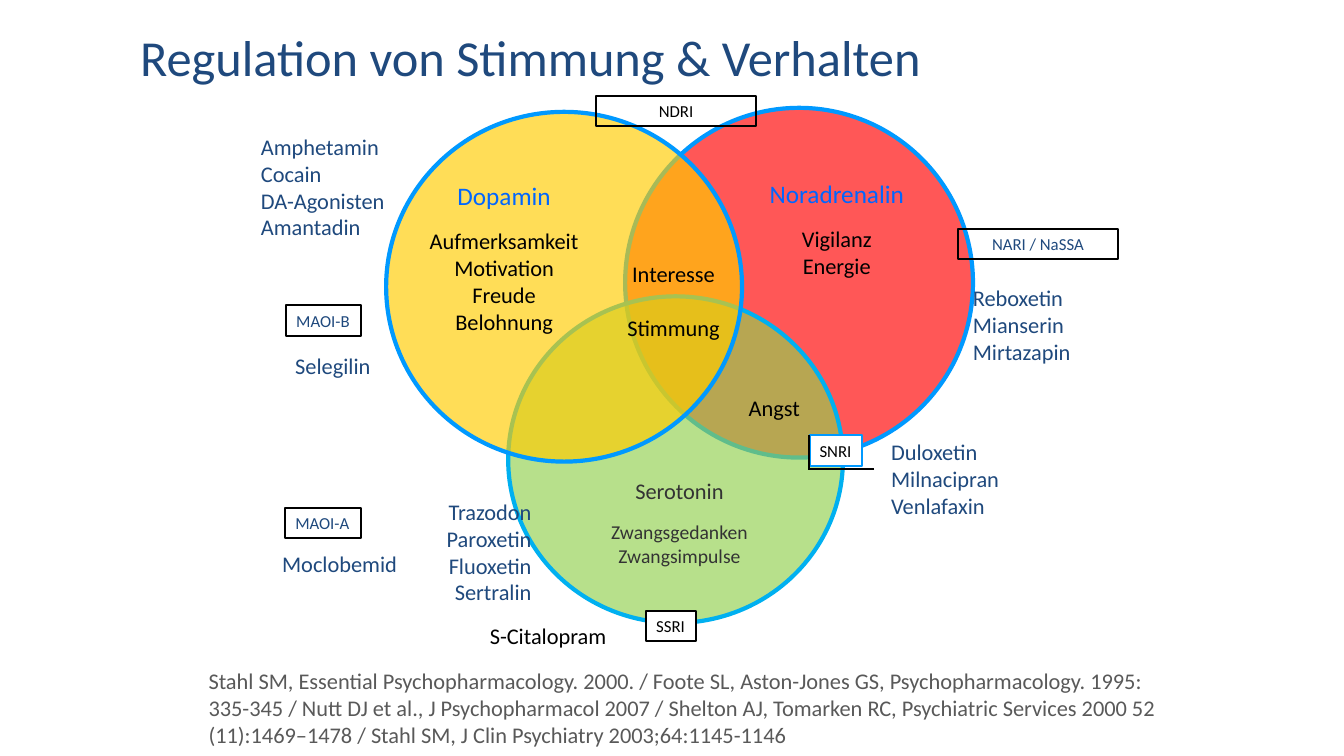
from typing import NamedTuple

from lxml import etree
from pptx import Presentation
from pptx.dml.color import RGBColor
from pptx.enum.shapes import MSO_CONNECTOR, MSO_SHAPE
from pptx.enum.text import MSO_ANCHOR, MSO_AUTO_SIZE, PP_ALIGN
from pptx.oxml.ns import qn
from pptx.util import Inches, Pt

LEFT, CENTER, RIGHT = PP_ALIGN.LEFT, PP_ALIGN.CENTER, PP_ALIGN.RIGHT
OVAL, RECT = MSO_SHAPE.OVAL, MSO_SHAPE.RECTANGLE
FONT = "Calibri"
NAVY, BLUE, BLACK, WHITE = "1F497D", "0066FF", "000000", "FFFFFF"
DARK, GREY = "333333", "595959"
RING = "0099FF"


class Box(NamedTuple):
    left: float
    top: float
    width: float
    height: float


class Circle(NamedTuple):
    box: Box
    fill: str
    line: str


class Line(NamedTuple):
    text: str
    size: int = 16
    color: str = BLACK
    before: float = 0


class Topic(NamedTuple):
    box: Box
    lines: list[Line]


class Drugs(NamedTuple):
    box: Box
    names: list[str]
    align: PP_ALIGN = LEFT
    color: str = NAVY


class Tag(NamedTuple):
    box: Box
    text: str
    color: str = BLACK
    fill: str | None = None
    line: str = BLACK
    centered: bool = False


CIRCLES = [
    Circle(Box(6.2, 1.07, 3.45, 3.47), "FF0000", RING),
    Circle(Box(5.04, 2.94, 3.32, 3.24), "92D050", "00B0F0"),
    Circle(Box(3.83, 1.11, 3.53, 3.47), "FFCC00", RING),
]
TOPICS = [
    Topic(Box(4.08, 1.74, 1.84, 1.64), [
        Line("Dopamin", 18, BLUE), Line("Aufmerksamkeit", before=12),
        Line("Motivation"), Line("Freude"), Line("Belohnung")]),
    Topic(Box(7.42, 1.72, 1.76, 1.1), [
        Line("Noradrenalin", 18, BLUE), Line("Vigilanz", before=12), Line("Energie")]),
    Topic(Box(7.23, 3.86, 0.9, 0.37), [Line("Angst")]),
    Topic(Box(5.86, 4.68, 1.76, 1), [
        Line("Serotonin", 16, DARK), Line("Zwangsgedanken", 14, DARK, 12),
        Line("Zwangsimpulse", 14, DARK)]),
    Topic(Box(6.04, 2.53, 1.28, 0.9), [Line("Interesse"), Line("Stimmung", before=19.5)]),
]
TAGS = [
    Tag(Box(6.41, 6.06, 0.49, 0.3), "SSRI", fill=WHITE),
    Tag(Box(8.03, 4.32, 0.52, 0.3), "SNRI", fill=WHITE, line=RING),
    Tag(Box(5.91, 0.95, 1.59, 0.3), "NDRI", centered=True),
    Tag(Box(2.83, 5.04, 0.75, 0.3), "MAOI-A", NAVY),
    Tag(Box(2.84, 3.03, 0.74, 0.3), "MAOI-B", NAVY),
    Tag(Box(9.5, 2.27, 1.59, 0.3), "NARI / NaSSA", NAVY, centered=True),
]
SNRI_EDGES = [(8.67, 4.65, 8.01, 4.65), (8.02, 4.32, 8.02, 4.66)]
DRUGS = [
    Drugs(Box(8.74, 4.3, 1.28, 0.91), ["Duloxetin", "Milnacipran", "Venlafaxin"]),
    Drugs(Box(4.32, 4.89, 1.05, 1.18),
          ["Trazodon", "Paroxetin", "Fluoxetin", "Sertralin"], RIGHT),
    Drugs(Box(4.76, 6.12, 1.65, 0.37), ["S-Citalopram"], color=BLACK),
    Drugs(Box(2.49, 1.27, 1.44, 1.18),
          ["Amphetamin", "Cocain", "DA-Agonisten", "Amantadin"]),
    Drugs(Box(9.55, 2.77, 1.18, 0.91), ["Reboxetin", "Mianserin", "Mirtazapin"]),
    Drugs(Box(2.83, 3.44, 0.96, 0.37), ["Selegilin"]),
    Drugs(Box(2.7, 5.41, 1.35, 0.37), ["Moclobemid"]),
]
SOURCES = (
    "Stahl SM, Essential Psychopharmacology. 2000. / Foote SL, Aston-Jones GS, "
    "Psychopharmacology. 1995: 335-345 / Nutt DJ et al., J Psychopharmacol 2007 / "
    "Shelton AJ, Tomarken RC, Psychiatric Services 2000 52 (11):1469–1478 / "
    "Stahl SM, J Clin Psychiatry 2003;64:1145-1146"
)


def rgb(color: str) -> RGBColor:
    return RGBColor.from_string(color)


def emu(box: Box) -> list[int]:
    return [Inches(v) for v in box]


def write(tf, lines: list[Line], align: PP_ALIGN, wrap: bool) -> None:
    tf.word_wrap = wrap
    for i, line in enumerate(lines):
        p = tf.paragraphs[0] if i == 0 else tf.add_paragraph()
        p.text = line.text
        p.alignment = align
        if line.before:
            p.space_before = Pt(line.before)
        p.font.name = FONT
        p.font.size = Pt(line.size)
        p.font.color.rgb = rgb(line.color)


def add_text(slide, box: Box, lines: list[Line], align: PP_ALIGN, wrap: bool) -> None:
    tf = slide.shapes.add_textbox(*emu(box)).text_frame
    write(tf, lines, align, wrap)
    tf.auto_size = MSO_AUTO_SIZE.SHAPE_TO_FIT_TEXT


def add_outlined(slide, kind: MSO_SHAPE, box: Box, fill: str | None, line: str, width: float):
    sp = slide.shapes.add_shape(kind, *emu(box))
    sp.shadow.inherit = False
    if fill:
        sp.fill.solid()
        sp.fill.fore_color.rgb = rgb(fill)
    else:
        sp.fill.background()
    sp.line.color.rgb = rgb(line)
    sp.line.width = Pt(width)
    return sp


def add_circle(slide, circle: Circle) -> None:
    sp = add_outlined(slide, OVAL, circle.box, circle.fill, circle.line, 3)
    color = sp.fill._xPr.find(qn("a:solidFill"))[0]
    etree.SubElement(color, qn("a:alpha")).set("val", "66000")


def add_tag(slide, tag: Tag) -> None:
    sp = add_outlined(slide, RECT, tag.box, tag.fill, tag.line, 1.5)
    align = CENTER if tag.centered else LEFT
    write(sp.text_frame, [Line(tag.text, 12, tag.color)], align, tag.centered)
    sp.text_frame.vertical_anchor = MSO_ANCHOR.TOP
    sp.text_frame.auto_size = MSO_AUTO_SIZE.SHAPE_TO_FIT_TEXT


def add_edge(slide, ends: tuple[float, float, float, float]) -> None:
    cxn = slide.shapes.add_connector(MSO_CONNECTOR.STRAIGHT, *[Inches(v) for v in ends])
    cxn.line.color.rgb = rgb(BLACK)
    cxn.line.width = Pt(1.5)
    etree.SubElement(cxn._element.spPr, qn("a:effectLst"))


def main() -> None:
    prs = Presentation()
    prs.slide_width, prs.slide_height = Inches(13.33), Inches(7.5)
    slide = prs.slides.add_slide(prs.slide_layouts[5])

    # Title
    title = slide.shapes.title
    title.left, title.top, title.width, title.height = emu(Box(1.29, 0.24, 8.62, 0.63))
    title.fill.solid()
    title.fill.fore_color.rgb = rgb(WHITE)
    write(title.text_frame, [Line("Regulation von Stimmung & Verhalten", 36, NAVY)], LEFT, True)
    title.text_frame.vertical_anchor = MSO_ANCHOR.MIDDLE

    # Overlapping circles and their topics
    for circle in CIRCLES:
        add_circle(slide, circle)
    for topic in TOPICS:
        add_text(slide, topic.box, topic.lines, CENTER, True)

    # Drug classes and drugs
    for tag in TAGS:
        add_tag(slide, tag)
    for ends in SNRI_EDGES:
        add_edge(slide, ends)
    for drugs in DRUGS:
        lines = [Line(name, color=drugs.color) for name in drugs.names]
        add_text(slide, drugs.box, lines, drugs.align, False)

    # References
    add_text(slide, Box(1.97, 6.57, 9.65, 0.91), [Line(SOURCES, color=GREY)], LEFT, True)
    prs.save("out.pptx")


if __name__ == "__main__":
    main()
